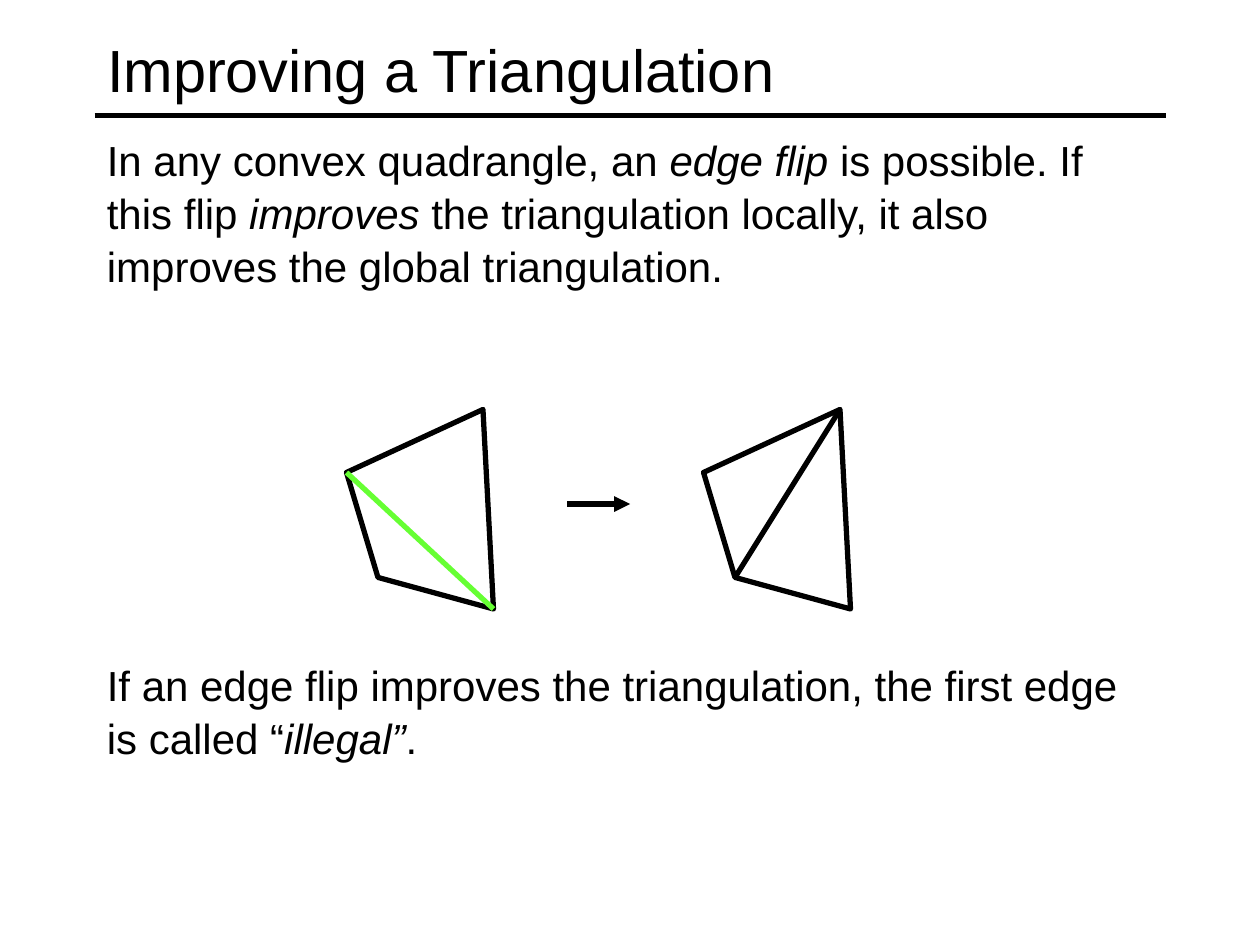
"""Build the slide that explains edge flips in a triangulation."""
from dataclasses import dataclass

import pptx
import pptx.dml.color
import pptx.enum.shapes
import pptx.enum.text
import pptx.oxml
import pptx.oxml.ns
import pptx.util

PX = pptx.util.Inches(1) // 120
Point = tuple[int, int]


@dataclass(frozen=True)
class Theme:
    ink: str = "000000"
    illegal_edge: str = "66FF33"
    font: str = "Arial"
    title_size: int = 34
    body_size: int = 24
    line_width: int = 3


@dataclass(frozen=True)
class Span:
    text: str
    italic: bool = False


@dataclass(frozen=True)
class TextBlock:
    top: int
    height: int
    spans: tuple[Span, ...]


@dataclass(frozen=True)
class Triangulation:
    offset: int
    diagonal: Point
    color: str


THEME = Theme()
LEFT, WIDTH = 90, 1020
QUADRANGLE: tuple[Point, ...] = ((330, 450), (460, 390), (470, 580), (360, 550))
TRIANGULATIONS = (
    Triangulation(0, (0, 2), THEME.illegal_edge),
    Triangulation(340, (3, 1), THEME.ink),
)
BLOCKS = (
    TextBlock(120, 184, (
        Span("In any convex quadrangle, an "),
        Span("edge flip", True),
        Span(" is possible. If this flip "),
        Span("improves", True),
        Span(" the triangulation locally, it also improves the global triangulation."),
    )),
    TextBlock(620, 140, (
        Span("If an edge flip improves the triangulation, the first edge is called “"),
        Span("illegal”", True),
        Span("."),
    )),
)


def apply(target, **values) -> None:
    """Set each named attribute on the target."""
    for name, value in values.items():
        setattr(target, name, value)


def place(shape, left: int, top: int, width: int, height: int) -> None:
    """Move and size a shape in px."""
    apply(shape, left=left * PX, top=top * PX, width=width * PX, height=height * PX)


def add_span(para, span: Span, size: int) -> None:
    """Add one run in the theme font."""
    run = para.add_run()
    run.text = span.text
    apply(run.font, name=THEME.font, size=pptx.util.Pt(size), italic=span.italic)
    run.font.color.rgb = pptx.dml.color.RGBColor.from_string(THEME.ink)


def style_line(line, color: str) -> None:
    """Give an outline its colour and width."""
    line.color.rgb = pptx.dml.color.RGBColor.from_string(color)
    line.width = pptx.util.Pt(THEME.line_width)


def add_line(page, start: Point, end: Point, color: str, arrow: bool = False) -> None:
    """Draw a straight line, with an arrowhead at its end if asked."""
    connector = page.shapes.add_connector(
        pptx.enum.shapes.MSO_CONNECTOR.STRAIGHT,
        *(value * PX for value in start + end))
    style_line(connector.line, color)
    properties = connector.element.spPr
    if arrow:
        pptx.oxml.ns.qn("a:tailEnd")
        outline = properties.find(pptx.oxml.ns.qn("a:ln"))
        outline.append(pptx.oxml.parse_xml(
            f'<a:tailEnd {pptx.oxml.ns.nsdecls("a")} type="triangle"/>'))
    properties.append(pptx.oxml.parse_xml(
        f'<a:effectLst {pptx.oxml.ns.nsdecls("a")}/>'))


def add_title(page, text: str) -> None:
    """Place and format the title placeholder."""
    title = page.shapes.title
    place(title, LEFT, 10, WIDTH, 110)
    apply(title.text_frame, word_wrap=True,
          vertical_anchor=pptx.enum.text.MSO_ANCHOR.MIDDLE)
    para = title.text_frame.paragraphs[0]
    para.alignment = pptx.enum.text.PP_ALIGN.LEFT
    add_span(para, Span(text), THEME.title_size)


def add_block(page, block: TextBlock) -> None:
    """Add a wrapped paragraph of mixed spans."""
    box = page.shapes.add_textbox(0, 0, 0, 0)
    place(box, LEFT, block.top, WIDTH, block.height)
    box.text_frame.word_wrap = True
    para = box.text_frame.paragraphs[0]
    apply(para, line_spacing=1.05, space_before=pptx.util.Pt(1))
    for span in block.spans:
        add_span(para, span, THEME.body_size)


def add_triangulation(page, item: Triangulation) -> None:
    """Draw the quadrangle and its diagonal."""
    corners = [(x + item.offset, y) for x, y in QUADRANGLE]
    builder = page.shapes.build_freeform(*corners[0], scale=PX)
    builder.add_line_segments(corners[1:], close=True)
    outline = builder.convert_to_shape()
    outline.shadow.inherit = False
    outline.fill.background()
    style_line(outline.line, THEME.ink)
    first, last = item.diagonal
    add_line(page, corners[first], corners[last], item.color)


def main() -> None:
    """Build and save the deck."""
    deck = pptx.Presentation()
    apply(deck, slide_width=1200 * PX, slide_height=900 * PX)
    page = deck.slides.add_slide(deck.slide_layouts[5])
    add_line(page, (LEFT, 110), (LEFT + WIDTH, 110), THEME.ink)
    add_title(page, "Improving a Triangulation")
    for item in TRIANGULATIONS:
        add_triangulation(page, item)
    add_line(page, (540, 480), (600, 480), THEME.ink, arrow=True)
    for block in BLOCKS:
        add_block(page, block)
    deck.save("out.pptx")


if __name__ == "__main__":
    main()
